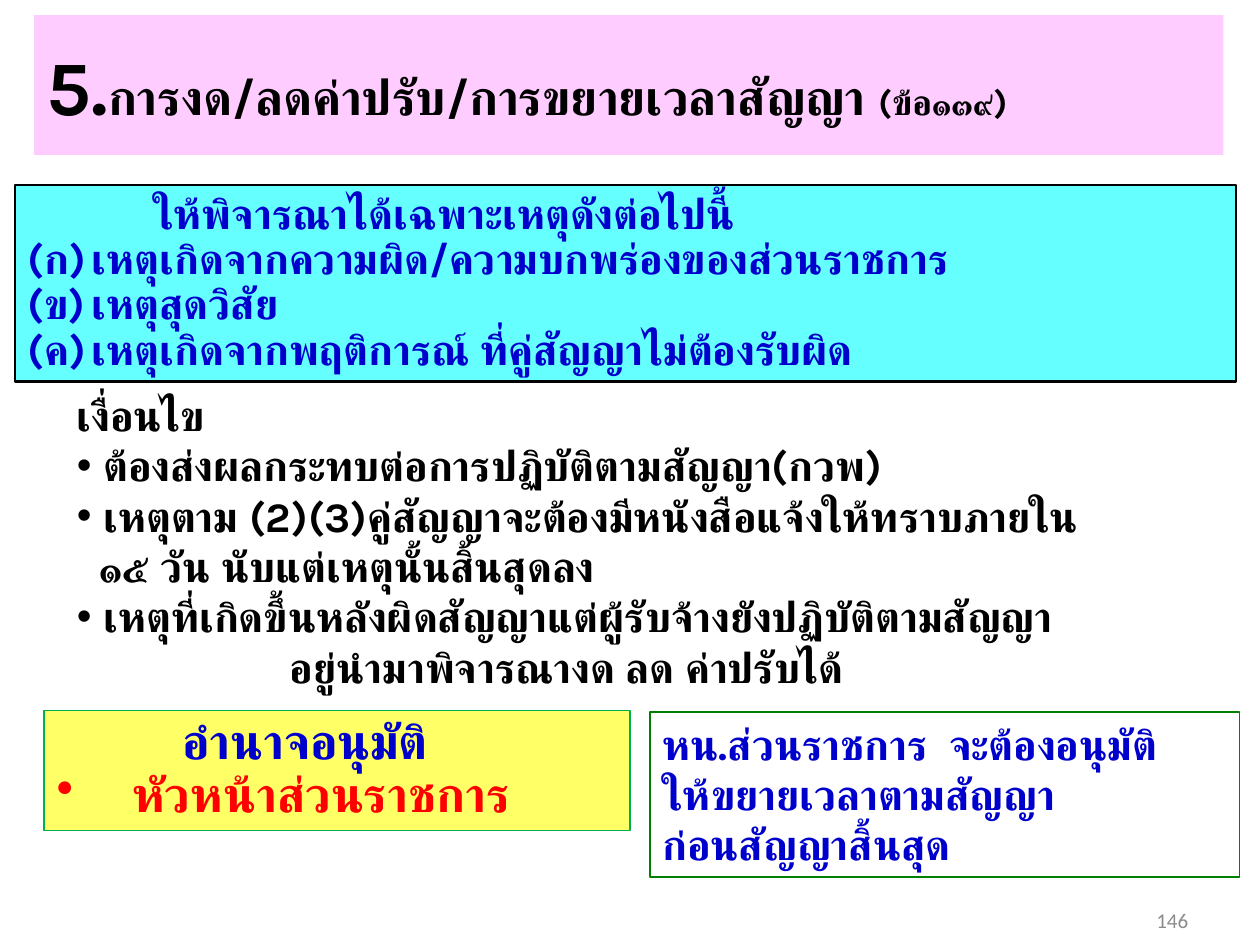
import pptx
import pptx.util
import pptx.dml.color
import pptx.enum.shapes
import pptx.enum.text
from dataclasses import dataclass
from lxml import etree

Inches = pptx.util.Inches
Pt = pptx.util.Pt
ALIGN = pptx.enum.text.PP_ALIGN
ANCHOR = pptx.enum.text.MSO_ANCHOR


@dataclass(frozen=True)
class Theme:
    font: str = "Karla"
    plain: str = "Calibri"
    ink: str = "000000"
    blue: str = "0000CC"
    red: str = "FF0000"
    gray: str = "8C8C8C"
    pink: str = "FFCCFF"
    cyan: str = "66FFFF"
    yellow: str = "FFFF66"
    white: str = "FFFFFF"
    leaf: str = "00B050"
    green: str = "008000"
    huge: int = 44
    large: int = 28
    body: int = 24
    small: int = 20
    note: int = 12


THEME = Theme()


def color(code):
    return pptx.dml.color.RGBColor.from_string(code)


def place(shape, box):
    shape.left, shape.top, shape.width, shape.height = map(Inches, box)


def paint(shape, fill, line=None, width=0.75):
    shape.fill.solid()
    shape.fill.fore_color.rgb = color(fill)
    if line:
        shape.line.color.rgb = color(line)
        shape.line.width = Pt(width)
    else:
        shape.line.fill.background()


def setup(frame, anchor):
    frame.word_wrap = True
    frame.auto_size = pptx.enum.text.MSO_AUTO_SIZE.NONE
    frame.vertical_anchor = anchor
    return frame


def add_run(para, text, size, ink, font=THEME.font, bold=True):
    run = para.add_run()
    run.text = text
    run.font.size = Pt(size)
    run.font.bold = bold
    run.font.name = font
    run.font.color.rgb = color(ink)
    # Thai script takes the complex-script font
    script = etree.SubElement(run.font._element, pptx.oxml.ns.qn("a:cs"))
    script.set("typeface", font)


def format_para(para, left=0, hang=0, mark=None, align=ALIGN.LEFT, lines=1.0):
    props = para._p.get_or_add_pPr()
    props.set("marL", str(Inches(left)))
    props.set("indent", str(-Inches(hang)))
    if mark is None:
        tag, key = "a:buNone", None
    elif mark == "•":
        tag, key = "a:buChar", "char"
    else:
        tag, key = "a:buAutoNum", "type"
    item = etree.SubElement(props, pptx.oxml.ns.qn(tag))
    if key:
        item.set(key, mark)
    para.alignment = align
    para.line_spacing = lines
    para.space_before = para.space_after = Pt(0)


def add_lines(frame, rows, size, lines=1.0):
    """Each row is text, left margin, hanging indent, bullet mark, colour."""
    for i, (text, left, hang, mark, ink) in enumerate(rows):
        para = frame.paragraphs[0] if i == 0 else frame.add_paragraph()
        format_para(para, left, hang, mark, lines=lines)
        add_run(para, text, size, ink)


def add_panel(slide, box, rows, size, fill, line, width=0.75,
              anchor=ANCHOR.MIDDLE, lines=1.0):
    kind = pptx.enum.shapes.MSO_SHAPE.RECTANGLE
    shape = slide.shapes.add_shape(kind, *map(Inches, box))
    shape.shadow.inherit = False
    paint(shape, fill, line, width)
    add_lines(setup(shape.text_frame, anchor), rows, size, lines)


def add_title(slide, box):
    title = slide.shapes.title
    place(title, box)
    paint(title, THEME.pink)
    para = setup(title.text_frame, ANCHOR.MIDDLE).paragraphs[0]
    format_para(para)
    for text, size in (("5.", THEME.huge),
                       ("การงด/ลดค่าปรับ/การขยายเวลาสัญญา ", THEME.large),
                       ("(ข้อ๑๓๙)", THEME.small)):
        add_run(para, text, size, THEME.ink)


def add_causes(slide, box):
    rows = [("ให้พิจารณาได้เฉพาะเหตุดังต่อไปนี้", 1, 0, None, THEME.blue)]
    for text in ("เหตุเกิดจากความผิด/ความบกพร่องของส่วนราชการ",
                 "เหตุสุดวิสัย",
                 "เหตุเกิดจากพฤติการณ์ ที่คู่สัญญาไม่ต้องรับผิด"):
        rows.append((text, 0.51, 0.51, "thaiNumParenBoth", THEME.blue))
    add_panel(slide, box, rows, THEME.body, THEME.cyan, THEME.ink, 1.5,
              lines=0.9)


def add_terms(slide, box):
    body = slide.placeholders[1]
    place(body, box)
    ink = THEME.ink
    rows = [
        ("เงื่อนไข", 0, 0, None, ink),
        ("ต้องส่งผลกระทบต่อการปฏิบัติตามสัญญา(กวพ)", 0.21, 0.21, "•", ink),
        ("เหตุตาม (2)(3)คู่สัญญาจะต้องมีหนังสือแจ้งให้ทราบภายใน",
         0.21, 0.21, "•", ink),
        ("๑๕ วัน นับแต่เหตุนั้นสิ้นสุดลง", 0.18, 0, None, ink),
        ("เหตุที่เกิดขึ้นหลังผิดสัญญาแต่ผู้รับจ้างยังปฏิบัติตามสัญญา",
         0.21, 0.21, "•", ink),
        ("อยู่นำมาพิจารณางด ลด ค่าปรับได้", 1.69, 0, None, ink),
    ]
    add_lines(setup(body.text_frame, ANCHOR.TOP), rows, THEME.body)


def add_power(slide, box):
    rows = [("อำนาจอนุมัติ", 1, 0, None, THEME.blue),
            ("หัวหน้าส่วนราชการ", 0.6, 0.6, "•", THEME.red)]
    add_panel(slide, box, rows, THEME.large, THEME.yellow, THEME.leaf,
              lines=0.9)


def add_limit(slide, box):
    rows = [(text, 0, 0, None, THEME.blue)
            for text in ("หน.ส่วนราชการ  จะต้องอนุมัติ",
                         "ให้ขยายเวลาตามสัญญา",
                         "ก่อนสัญญาสิ้นสุด")]
    add_panel(slide, box, rows, THEME.body, THEME.white, THEME.green,
              anchor=ANCHOR.TOP)


def add_number(slide, box):
    label = slide.shapes.add_textbox(*map(Inches, box))
    para = setup(label.text_frame, ANCHOR.MIDDLE).paragraphs[0]
    format_para(para, align=ALIGN.RIGHT)
    add_run(para, "146", THEME.note, THEME.gray, THEME.plain, False)


def main():
    deck = pptx.Presentation()
    deck.slide_width, deck.slide_height = Inches(10), Inches(7.5)
    slide = deck.slides.add_slide(deck.slide_layouts[1])
    # Heading and permitted causes
    add_title(slide, (0.27, 0.12, 9.44, 1.11))
    add_causes(slide, (0.12, 1.47, 9.69, 1.56))
    # Conditions
    add_terms(slide, (0.51, 3.04, 9.21, 2.52))
    # Approval authority and time limit
    add_power(slide, (0.35, 5.64, 4.65, 0.95))
    add_limit(slide, (5.16, 5.65, 4.68, 1.31))
    add_number(slide, (7.2, 7.1, 2.33, 0.4))
    deck.save("out.pptx")


if __name__ == "__main__":
    main()
